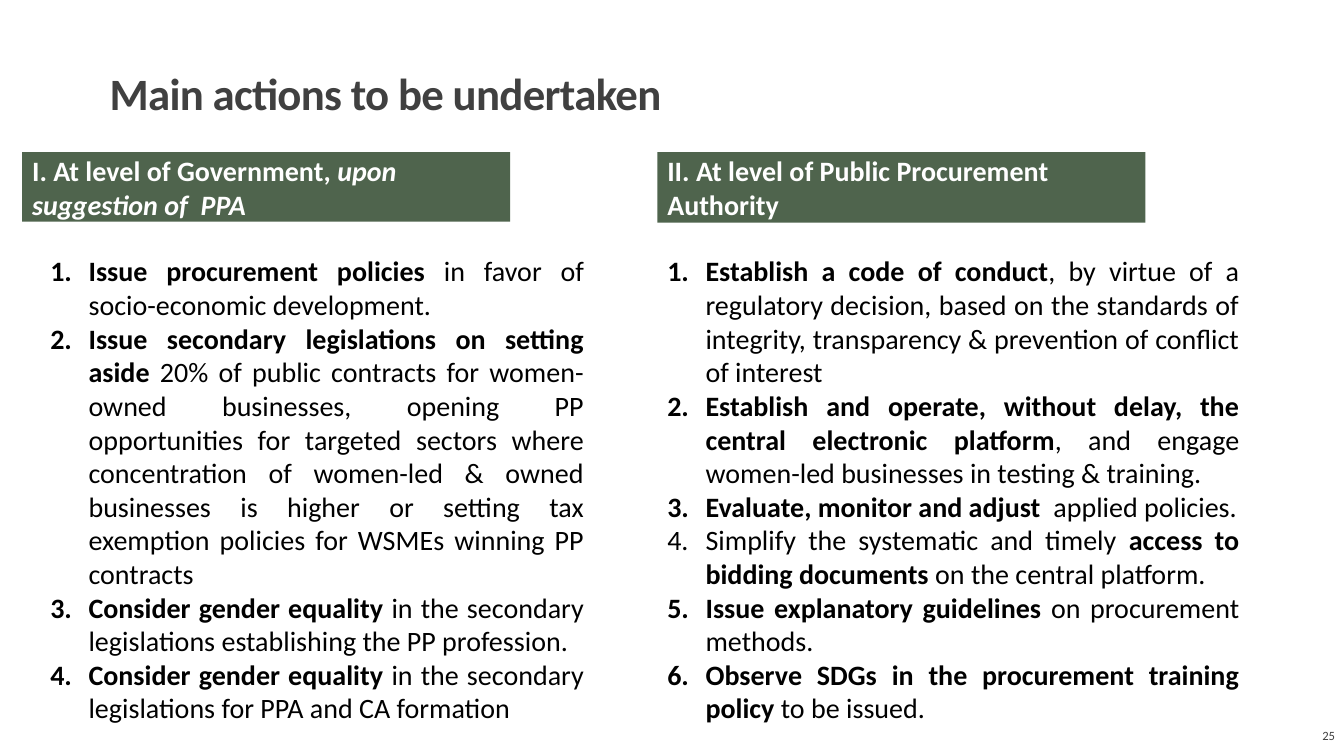
from dataclasses import dataclass

from lxml.etree import SubElement
from pptx import Presentation
from pptx.dml.color import RGBColor
from pptx.enum.shapes import MSO_SHAPE as Shape
from pptx.enum.text import MSO_ANCHOR as Anchor, MSO_AUTO_SIZE as AutoSize, PP_ALIGN as Align
from pptx.oxml.ns import qn
from pptx.util import Inches, Pt


@dataclass(frozen=True)
class Theme:
    font: str = "Calibri"
    grey: RGBColor = RGBColor(0x40, 0x40, 0x40)
    green: RGBColor = RGBColor(0x4F, 0x64, 0x4D)
    white: RGBColor = RGBColor(0xFF, 0xFF, 0xFF)
    black: RGBColor = RGBColor(0, 0, 0)
    title_size: int = 32
    body_size: int = 20
    number_size: int = 9


@dataclass(frozen=True)
class Span:
    text: str
    bold: bool = False
    italic: bool = False


@dataclass(frozen=True)
class Box:
    left: float
    top: float
    width: float
    height: float

    def lengths(self) -> tuple:
        return tuple(Inches(value) for value in (self.left, self.top, self.width, self.height))


@dataclass(frozen=True)
class ActionColumn:
    heading_box: Box
    heading: list[Span]
    list_box: Box
    actions: list[list[Span]]


THEME = Theme()
NUMBER_INDENT = 0.38
HEADING_TOP, HEADING_WIDTH = 1.51, 4.84
LIST_TOP, LIST_HEIGHT = 2.47, 4.81

COLUMNS = [
    ActionColumn(
        Box(0.22, HEADING_TOP, HEADING_WIDTH, 0.69),
        [Span("I. At level of Government, ", True), Span("upon suggestion of  PPA", True, True)],
        Box(0.4, LIST_TOP, 5.49, LIST_HEIGHT),
        [
            [Span("Issue procurement policies ", True),
             Span("in favor of socio-economic development.")],
            [Span("Issue secondary legislations on setting aside", True),
             Span(" 20% of public contracts for women-owned businesses, opening PP opportunities "
                  "for targeted sectors where concentration of women-led & owned businesses is "
                  "higher or setting tax exemption policies for WSMEs winning PP contracts")],
            [Span("Consider gender equality ", True),
             Span("in the secondary legislations establishing the PP profession.")],
            [Span("Consider gender equality ", True),
             Span("in the secondary legislations for PPA and CA formation")],
        ],
    ),
    ActionColumn(
        Box(6.52, HEADING_TOP, HEADING_WIDTH, 0.7),
        [Span("II. At level of Public Procurement Authority", True)],
        Box(6.52, LIST_TOP, 5.87, LIST_HEIGHT),
        [
            [Span("Establish a code of conduct", True),
             Span(", by virtue of a regulatory decision, based on the standards of integrity, "
                  "transparency & prevention of conflict of interest")],
            [Span("Establish and operate, without delay, the central electronic platform", True),
             Span(", and engage women-led businesses in testing & training.")],
            [Span("Evaluate, monitor and adjust  ", True), Span("applied policies.")],
            [Span("Simplify the systematic and timely "),
             Span("access to bidding documents ", True), Span("on the central platform.")],
            [Span("Issue explanatory guidelines ", True), Span("on procurement methods.")],
            [Span("Observe SDGs in the procurement training policy", True),
             Span(" to be issued.")],
        ],
    ),
]


def number_paragraph(paragraph) -> None:
    """Give the paragraph a hanging automatic number."""
    properties = paragraph._p.get_or_add_pPr()
    properties.set("marL", str(Inches(NUMBER_INDENT)))
    properties.set("indent", str(-Inches(NUMBER_INDENT)))
    SubElement(properties, qn("a:buFont"), typeface="+mj-lt")
    SubElement(properties, qn("a:buAutoNum"), type="arabicPeriod")


def write_text(shape, paragraphs: list[list[Span]], *, size: int, color: RGBColor,
               align: Align = Align.LEFT, anchor: Anchor = Anchor.TOP,
               line_spacing: float | None = None, letter_spacing: float = 0,
               numbered: bool = False, grow: bool = False) -> None:
    frame = shape.text_frame
    frame.word_wrap = True
    frame.vertical_anchor = anchor
    frame.auto_size = AutoSize.SHAPE_TO_FIT_TEXT if grow else AutoSize.NONE
    for index, spans in enumerate(paragraphs):
        paragraph = frame.add_paragraph() if index else frame.paragraphs[0]
        paragraph.alignment = align
        if line_spacing:
            paragraph.line_spacing = line_spacing
        if numbered:
            number_paragraph(paragraph)
        for span in spans:
            run = paragraph.add_run()
            run.text = span.text
            font = run.font
            font.name, font.size = THEME.font, Pt(size)
            font.bold, font.italic = span.bold, span.italic
            font.color.rgb = color
            if letter_spacing:
                run._r.get_or_add_rPr().set("spc", str(round(letter_spacing * 100)))


def draw_column(slide, column: ActionColumn) -> None:
    heading = slide.shapes.add_shape(Shape.RECTANGLE, *column.heading_box.lengths())
    heading.shadow.inherit = False
    heading.fill.solid()
    heading.fill.fore_color.rgb = THEME.green
    heading.line.fill.background()
    write_text(heading, [column.heading], size=THEME.body_size, color=THEME.white,
               anchor=Anchor.MIDDLE)
    action_list = slide.shapes.add_textbox(*column.list_box.lengths())
    write_text(action_list, column.actions, size=THEME.body_size, color=THEME.black,
               align=Align.JUSTIFY, numbered=True, grow=True)


def main() -> None:
    presentation = Presentation()
    presentation.slide_width, presentation.slide_height = Inches(13.33), Inches(7.5)
    slide = presentation.slides.add_slide(presentation.slide_layouts[6])

    page_number = slide.shapes.add_textbox(*Box(12.45, 7.1, 0.89, 0.4).lengths())
    write_text(page_number, [[Span("25")]], size=THEME.number_size, color=THEME.grey,
               align=Align.RIGHT, anchor=Anchor.MIDDLE)
    title = slide.shapes.add_textbox(*Box(0.99, 0.33, 11.46, 0.9).lengths())
    write_text(title, [[Span("Main actions to be undertaken", True)]], size=THEME.title_size,
               color=THEME.grey, anchor=Anchor.BOTTOM, line_spacing=0.8, letter_spacing=-0.5)
    for column in COLUMNS:
        draw_column(slide, column)

    presentation.save("out.pptx")


if __name__ == "__main__":
    main()
